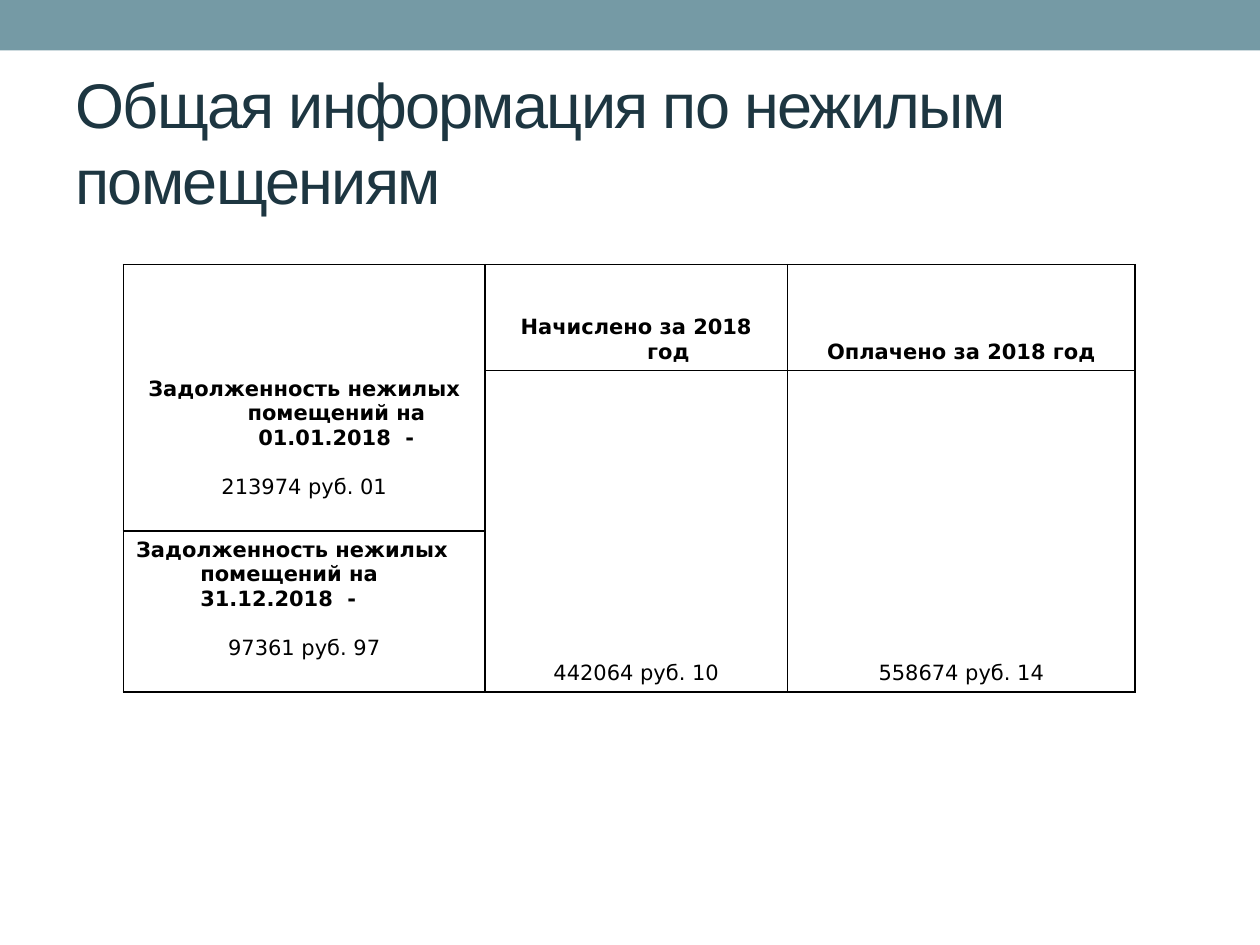
from lxml import etree
from pptx import Presentation
from pptx.dml.color import RGBColor
from pptx.enum.shapes import MSO_SHAPE
from pptx.enum.text import MSO_ANCHOR, PP_ALIGN
from pptx.oxml.ns import qn
from pptx.util import Inches, Pt

RECT = MSO_SHAPE.RECTANGLE
BOTTOM, MIDDLE = MSO_ANCHOR.BOTTOM, MSO_ANCHOR.MIDDLE
LEFT, CENTER = PP_ALIGN.LEFT, PP_ALIGN.CENTER

BAND = RGBColor(0x75, 0x9A, 0xA5)
TITLE = RGBColor(0x1D, 0x36, 0x41)
BLACK = RGBColor(0, 0, 0)

COLS = [2.87, 2.4, 2.76]
ROWS = [0.84, 1.27, 1.27]
HANGING = Inches(0.51)


def add_band(s):
    band = s.shapes.add_shape(RECT, 0, 0, Inches(10), Inches(0.4))
    band.shadow.inherit = False
    band.fill.solid()
    band.fill.fore_color.rgb = BAND
    band.line.fill.background()


def set_title(s, text):
    sp = s.shapes.title
    sp.left, sp.top, sp.width, sp.height = map(Inches, (0.5, 0.58, 9, 1.08))
    tf = sp.text_frame
    tf.word_wrap = True
    tf.vertical_anchor = MIDDLE
    p = tf.paragraphs[0]
    p.alignment = LEFT
    r = p.add_run()
    r.text = text
    r.font.name, r.font.size = "Arial", Pt(36)
    r.font.color.rgb = TITLE
    r._r.get_or_add_rPr().set("spc", "-100")


def style_cell(cell):
    """No fill, thin black border on every side."""
    cell.fill.background()
    tcPr = cell._tc.get_or_add_tcPr()
    for i, side in enumerate(("a:lnL", "a:lnR", "a:lnT", "a:lnB")):
        ln = etree.Element(qn(side), w=str(Pt(1)))
        fill = etree.SubElement(ln, qn("a:solidFill"))
        etree.SubElement(fill, qn("a:srgbClr"), val=str(BLACK))
        tcPr.insert(i, ln)


def add_text(p, text, bold, align=CENTER):
    pPr = p._p.get_or_add_pPr()
    pPr.set("marL", str(HANGING))
    pPr.set("indent", str(-HANGING))
    p.alignment = align
    r = p.add_run()
    r.text = text
    r.font.name, r.font.size, r.font.bold = "DejaVu Sans", Pt(12), bold
    r.font.color.rgb = BLACK


def fill_cell(cell, label=None, value=None, align=CENTER):
    """Bold label, plain value, or a label with its value below."""
    cell.vertical_anchor = BOTTOM
    tf = cell.text_frame
    p = tf.paragraphs[0]
    if label:
        add_text(p, label, True, align)
    if label and value:
        p = tf.add_paragraph()
        p.space_before = Pt(14)
        cell.margin_bottom = Inches(0.25)
    if value:
        add_text(p, value, False)


def add_debt_table(s):
    table = s.shapes.add_table(
        len(ROWS), len(COLS), Inches(0.98), Inches(2.1),
        Inches(sum(COLS)), Inches(sum(ROWS))).table
    for col, width in zip(table.columns, COLS):
        col.width = Inches(width)
    for row, height in zip(table.rows, ROWS):
        row.height = Inches(height)
    for cell in table.iter_cells():
        style_cell(cell)

    # Merged areas: opening debt, charged amount, paid amount
    for row, col in ((0, 0), (1, 1), (1, 2)):
        table.cell(row, col).merge(table.cell(row + 1, col))

    # Debt at both dates
    debt = "Задолженность нежилых помещений на {}  -"
    fill_cell(table.cell(0, 0), debt.format("01.01.2018"), "213974 руб. 01")
    fill_cell(table.cell(2, 0), debt.format("31.12.2018"), "97361 руб. 97", LEFT)

    # Charged and paid during the year
    totals = (("Начислено за 2018 год", "442064 руб. 10"),
              ("Оплачено за 2018 год", "558674 руб. 14"))
    for col, (label, value) in enumerate(totals, 1):
        fill_cell(table.cell(0, col), label=label)
        fill_cell(table.cell(1, col), value=value)


def main():
    prs = Presentation()
    prs.slide_width, prs.slide_height = Inches(10), Inches(7.5)
    s = prs.slides.add_slide(prs.slide_layouts[5])
    add_band(s)
    set_title(s, "Общая информация по нежилым помещениям")
    add_debt_table(s)
    prs.save("out.pptx")


if __name__ == "__main__":
    main()
